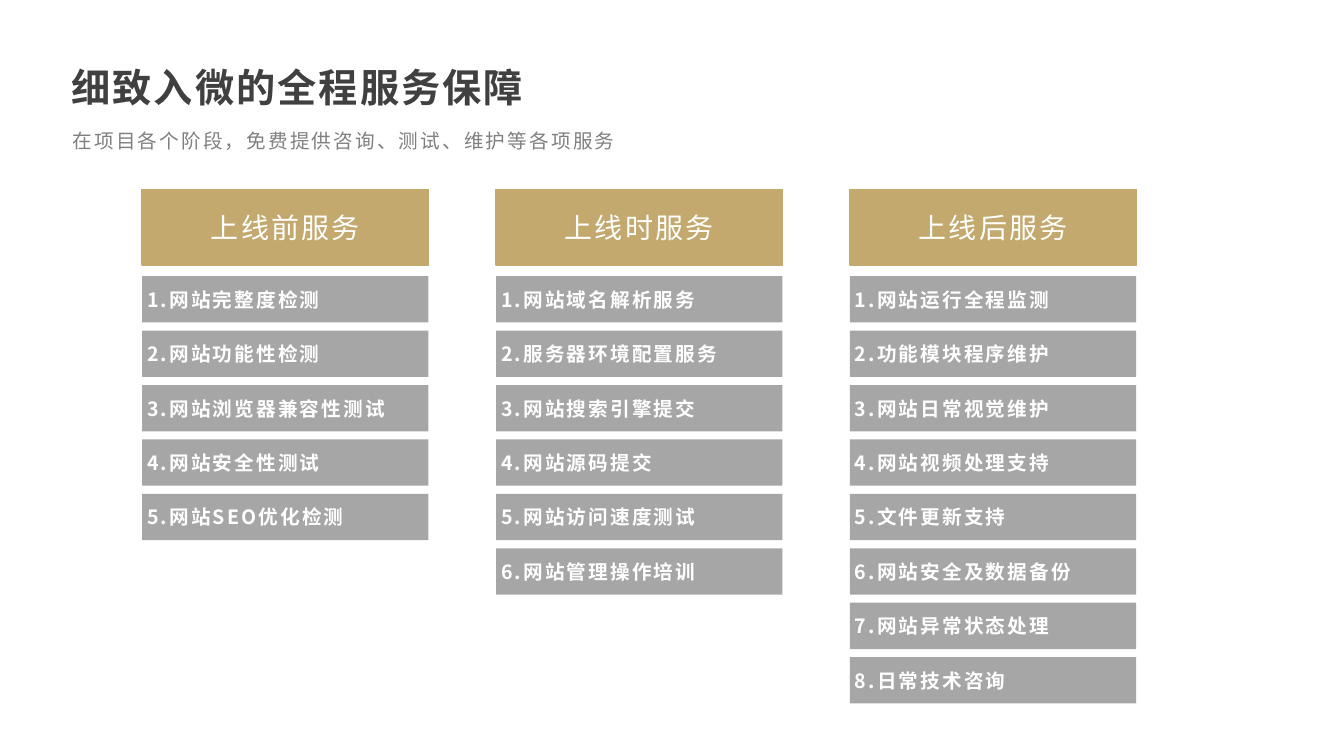
from lxml.etree import SubElement
from pptx import Presentation
from pptx.dml.color import RGBColor
from pptx.enum.shapes import MSO_SHAPE as Shape
from pptx.enum.text import MSO_ANCHOR as Anchor, PP_ALIGN as Align
from pptx.oxml.ns import qn
from pptx.util import Inches, Pt

FONT = "Noto Sans CJK SC"
GOLD, GRAY, WHITE = "C3A96E", "A6A6A6", "FFFFFF"
STAGES = [
    ("上线前服务", ["网站完整度检测", "网站功能性检测", "网站浏览器兼容性测试",
               "网站安全性测试", "网站SEO优化检测"]),
    ("上线时服务", ["网站域名解析服务", "服务器环境配置服务", "网站搜索引擎提交",
               "网站源码提交", "网站访问速度测试", "网站管理操作培训"]),
    ("上线后服务", ["网站运行全程监测", "功能模块程序维护", "网站日常视觉维护",
               "网站视频处理支持", "文件更新支持", "网站安全及数据备份",
               "网站异常状态处理", "日常技术咨询"]),
]


def color(code):
    """Turn a hex string into a colour."""
    return RGBColor.from_string(code)


def write(shape, text, size=14, ink=WHITE, bold=False, align=Align.LEFT,
          anchor=Anchor.MIDDLE, pad=(0.05, 0.05), wrap=True, lead=None):
    """Write one formatted paragraph into a shape."""
    frame = shape.text_frame
    frame.word_wrap, frame.vertical_anchor = wrap, anchor
    frame.margin_left = frame.margin_right = Inches(pad[0])
    frame.margin_top = frame.margin_bottom = Inches(pad[1])
    para = frame.paragraphs[0]
    para.alignment, para.line_spacing = align, lead
    run = para.add_run()
    run.text = text
    font = run.font
    font.size, font.bold, font.name = Pt(size), bold, FONT
    font.color.rgb = color(ink)
    props = run._r.get_or_add_rPr()
    props.set("spc", "150")
    SubElement(props, qn("a:ea")).set("typeface", FONT)


def bar(slide, box, fill, text, edge=None, **style):
    """Draw a filled bar with its label."""
    shape = slide.shapes.add_shape(Shape.RECTANGLE, *map(Inches, box))
    shape.shadow.inherit = False
    shape.fill.solid()
    shape.fill.fore_color.rgb = color(fill)
    if edge:
        shape.line.color.rgb = color(fill)
        shape.line.width = Pt(edge)
    else:
        shape.line.fill.background()
    write(shape, text, **style)


def header(slide, left, top, width):
    """Place the title and the line below it."""
    title = slide.shapes.add_textbox(*map(Inches, (left, top, 4.71, 0.57)))
    write(title, "细致入微的全程服务保障", size=28, ink="404040", bold=True,
          anchor=Anchor.TOP, pad=(0.1, 0.05), wrap=False)
    box = (left + 0.08, top + 0.58, width, 0.38)
    note = slide.shapes.add_textbox(*map(Inches, box))
    write(note, "在项目各个阶段，免费提供咨询、测试、维护等各项服务",
          ink="808080", pad=(0.03, 0.03), lead=1.4)


def stage(slide, left, top, width, name, items):
    """Stack a stage heading and its numbered services."""
    bar(slide, (left, top, width, 0.75), GOLD, name, edge=1,
        size=20, align=Align.CENTER)
    for row, item in enumerate(items):
        box = (left, top + 0.86 + 0.54 * row, width, 0.46)
        bar(slide, box, GRAY, f"{row + 1}.{item}", bold=True)


def main():
    """Build and save the slide."""
    deck = Presentation()
    deck.slide_width, deck.slide_height = Inches(13.33), Inches(7.5)
    slide = deck.slides.add_slide(deck.slide_layouts[6])
    header(slide, 0.61, 0.58, 8.12)
    for col, (name, items) in enumerate(STAGES):
        stage(slide, 1.41 + 3.51 * col, 1.88, 2.84, name, items)
    deck.save("out.pptx")


if __name__ == "__main__":
    main()
